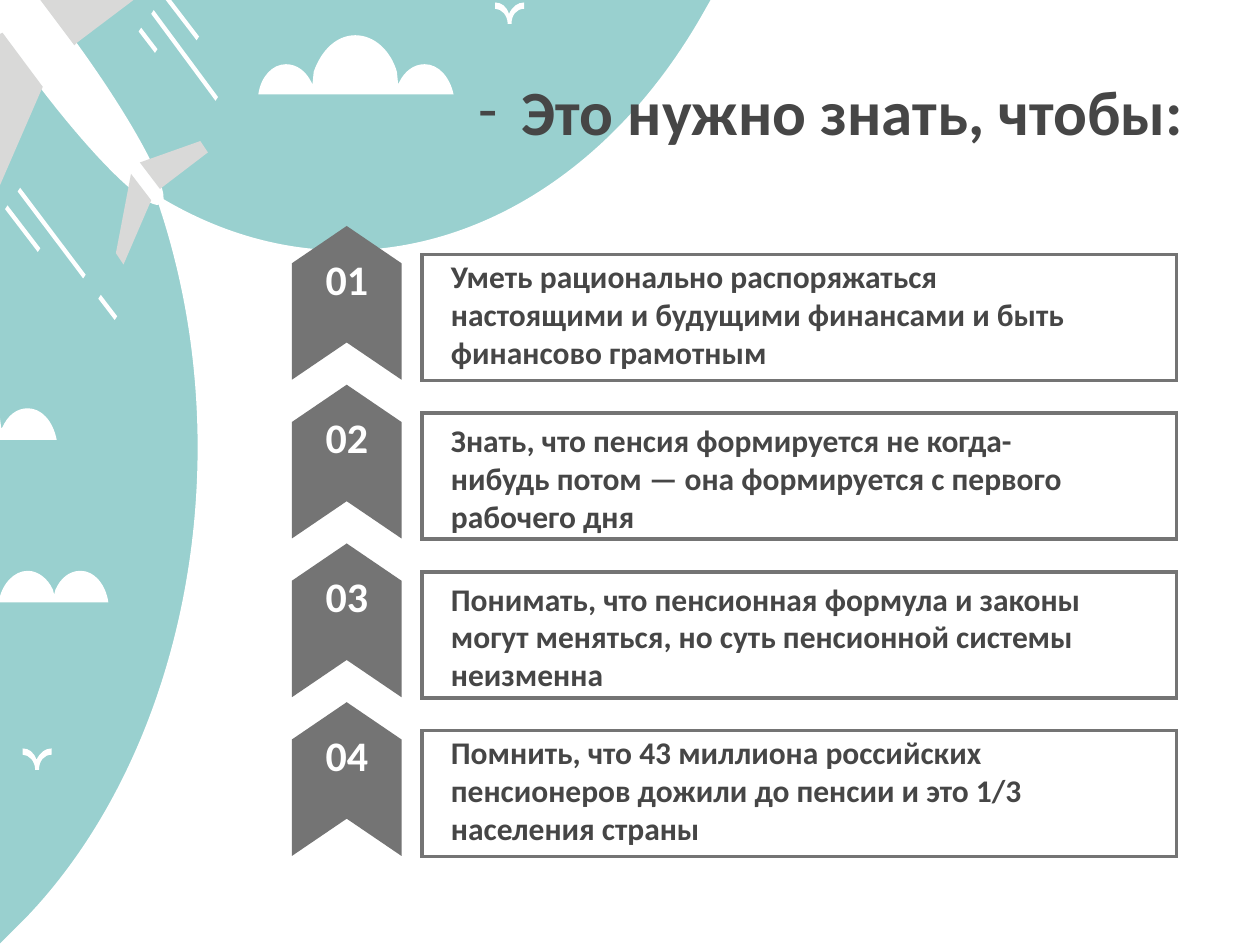
from lxml import etree
from pptx import Presentation
from pptx.dml.color import RGBColor
from pptx.enum.shapes import MSO_SHAPE
from pptx.enum.text import MSO_ANCHOR, MSO_AUTO_SIZE, PP_ALIGN
from pptx.oxml.ns import qn
from pptx.util import Cm, Pt

RECT = MSO_SHAPE.RECTANGLE
CHEVRON = MSO_SHAPE.CHEVRON
ROUND = MSO_SHAPE.ROUND_2_SAME_RECTANGLE
TOP, MIDDLE = MSO_ANCHOR.TOP, MSO_ANCHOR.MIDDLE
GROW = MSO_AUTO_SIZE.SHAPE_TO_FIT_TEXT
LEFT, CENTER, RIGHT = PP_ALIGN.LEFT, PP_ALIGN.CENTER, PP_ALIGN.RIGHT

COLORS = {"sky": "99D0CF", "white": "FFFFFF", "wing": "D9D9D8",
          "gray": "747474", "ink": "464646"}
FONT = "Calibri"
UNIT = 1000
SCALE = Cm(2.54) / UNIT
PITCH = 3.2

ROWS = [
    (4.93, "Уметь рационально распоряжаться настоящими и будущими финансами "
           "и быть финансово грамотным"),
    (8.23, "Знать, что пенсия формируется не когда-нибудь потом — "
           "она формируется с первого рабочего дня"),
    (11.43, "Понимать, что пенсионная формула и законы могут меняться, "
            "но суть пенсионной системы неизменна"),
    (14.53, "Помнить, что 43 миллиона российских пенсионеров дожили до пенсии "
            "и это 1/3 населения страны"),
]

LAND = [(10, 0), (5.64, 0), (5.6, 0.07), (4.61, 1.85, 2.79, 2.51, 1.23, 1.54),
        (1.95, 3.58, 1.48, 5.95, 0.21, 7.28), (-0.01, 7.5), (10, 7.5)]
STREAKS = [(0.8, 2.34, 0.13, 0.17), (0.06, 1.63, 0.26, 0.34),
           (0.16, 1.49, 0.52, 0.69), (1.12, 0.22, 0.13, 0.17),
           (1.22, 0.08, 0.51, 0.69), (1.32, -0.05, 0.26, 0.34)]
CLOUDS = [
    [(2.82, 0.28), (2.67, 0.28, 2.55, 0.4, 2.49, 0.57), (2.48, 0.67),
     (2.47, 0.65), (2.43, 0.57, 2.36, 0.51, 2.27, 0.51),
     (2.16, 0.51, 2.07, 0.61, 2.05, 0.75), (3.6, 0.75),
     (3.57, 0.61, 3.48, 0.51, 3.37, 0.51),
     (3.28, 0.51, 3.21, 0.57, 3.17, 0.65), (3.16, 0.67), (3.15, 0.57),
     (3.1, 0.4, 2.97, 0.28, 2.82, 0.28)],
    [(0.64, 4.53), (0.55, 4.53, 0.48, 4.59, 0.44, 4.68), (0.43, 4.72),
     (0.42, 4.68), (0.38, 4.59, 0.3, 4.53, 0.22, 4.53),
     (0.11, 4.53, 0.01, 4.64, -0.01, 4.78), (0.86, 4.78),
     (0.84, 4.64, 0.75, 4.53, 0.64, 4.53)],
    [(0.22, 3.24), (0.13, 3.24, 0.06, 3.3, 0.02, 3.39), (0.01, 3.4),
     (0, 3.32), (0, 3.49), (0.45, 3.49),
     (0.42, 3.34, 0.33, 3.24, 0.22, 3.24)],
]
BIRD = [(0.1, 0.17), (0.13, 0.17), (0.13, 0.1, 0.17, 0.05, 0.23, 0.05),
        (0.23, 0), (0.18, 0, 0.14, 0.03, 0.11, 0.09),
        (0.09, 0.03, 0.05, 0, 0, 0), (0, 0.05),
        (0.05, 0.05, 0.1, 0.1, 0.1, 0.17)]
BIRDS = [(3.93, 0.02), (0.18, 5.94)]
HULL = [(0.35, 0), (0, 0), (0, 0.27), (0.27, 0.63),
        (0.75, 1.27, 1.21, 1.72, 1.29, 1.61),
        (1.36, 1.51, 1.03, 0.91, 0.55, 0.26)]
WINGS = [[(1.04, 1.38), (0.92, 2.01), (0.98, 2.1), (1.2, 1.59)],
         [(1.59, 1.12), (1.11, 1.29), (1.27, 1.5), (1.65, 1.21)],
         [(0.02, 0.26), (0, 0.27), (0, 1.47), (0.33, 0.71), (0.34, 0.69)],
         [(1.06, 0), (0.32, 0), (0.59, 0.36), (0.61, 0.34)]]


def color(name):
    return RGBColor.from_string(COLORS[name])


def paint(shape, fill=None, line=None):
    shape.shadow.inherit = False
    if fill:
        shape.fill.solid()
        shape.fill.fore_color.rgb = color(fill)
    else:
        shape.fill.background()
    if line:
        shape.line.color.rgb = color(line)
        shape.line.width = Pt(2)
        edge = shape._element.spPr.find(qn("a:ln"))
        etree.SubElement(edge, qn("a:miter")).set("lim", "800000")
    else:
        shape.line.fill.background()


def add_box(slide, kind, x, y, w, h, fill=None, line=None):
    shape = slide.shapes.add_shape(kind, Cm(x), Cm(y), Cm(w), Cm(h))
    paint(shape, fill, line)
    return shape


def expand(nodes, dx, dy):
    return [((x + dx) * UNIT, (y + dy) * UNIT)
            for node in nodes for x, y in zip(node[::2], node[1::2])]


def bend(shape, outlines):
    marks = iter(list(shape._element.iter(qn("a:lnTo"))))
    for nodes in outlines:
        for node in nodes[1:]:
            mark = next(marks)
            if len(node) == 6:
                mark.tag = qn("a:cubicBezTo")
                for extra in (next(marks), next(marks)):
                    mark.append(extra[0])
                    extra.getparent().remove(extra)


def add_free(slide, outlines, fill, dx=0, dy=0):
    loops = [expand(nodes, dx, dy) for nodes in outlines]
    pen = slide.shapes.build_freeform(*loops[0][0], scale=SCALE)
    pen.add_line_segments(loops[0][1:], close=True)
    for loop in loops[1:]:
        pen.move_to(*loop[0])
        pen.add_line_segments(loop[1:], close=True)
    shape = pen.convert_to_shape()
    bend(shape, outlines)
    paint(shape, fill)


def streak(x, y, dx, dy):
    return [(x, y), (x - 0.02, y + 0.03),
            (x + dx - 0.02, y + dy + 0.03), (x + dx, y + dy)]


def set_text(shape, text, size, ink, align, anchor=TOP):
    frame = shape.text_frame
    frame.text = text
    frame.word_wrap = True
    frame.vertical_anchor = anchor
    para = frame.paragraphs[0]
    para.alignment = align
    font = para.runs[0].font
    font.name, font.size, font.bold = FONT, Pt(size), True
    font.color.rgb = color(ink)
    return para


def add_label(slide, x, y, w, h):
    return slide.shapes.add_textbox(Cm(x), Cm(y), Cm(w), Cm(h))


def add_dash(para, gap):
    props = para._p.get_or_add_pPr()
    props.set("marL", str(Cm(gap)))
    props.set("indent", str(-Cm(gap)))
    etree.SubElement(props, qn("a:buFont")).set("typeface", FONT)
    etree.SubElement(props, qn("a:buChar")).set("char", "-")


def add_scene(slide):
    add_box(slide, RECT, 0, 0, 14.38, 19.05, "sky")
    add_free(slide, [LAND], "white")
    add_free(slide, [streak(*item) for item in STREAKS], "white")
    for cloud in CLOUDS:
        add_free(slide, [cloud], "white")
    for x, y in BIRDS:
        add_free(slide, [BIRD], "white", x, y)
    add_free(slide, [HULL], "white")
    add_free(slide, WINGS, "wing")


def add_title(slide):
    title = add_label(slide, 4.6, 1.93, 19.51, 2.13)
    title.text_frame.margin_bottom = Cm(1.68)
    para = set_text(title, "Это нужно знать, чтобы:", 36, "ink", RIGHT, MIDDLE)
    add_dash(para, 0.88)


def add_row(slide, index, top, text):
    drop = index * PITCH
    add_box(slide, RECT, 8.51, 5.13 + drop, 15.21, 2.54, line="gray")
    arrow = add_box(slide, CHEVRON, 5.44, 5 + drop, 3.1, 2.21, "gray")
    arrow.adjustments[0] = 0.34
    arrow.rotation = 270
    label = add_label(slide, 6.22, 4.98 + drop, 1.55, 1.27)
    set_text(label, f"{index + 1:02}", 24, "white", CENTER)
    label.text_frame.auto_size = GROW
    note = add_box(slide, ROUND, 8.71, top, 14, 2.69)
    set_text(note, text, 18, "ink", LEFT)
    note.text_frame.auto_size = GROW


def main():
    deck = Presentation()
    deck.slide_width, deck.slide_height = Cm(25.4), Cm(19.05)
    slide = deck.slides.add_slide(deck.slide_layouts[6])
    add_scene(slide)
    add_title(slide)
    for index, (top, text) in enumerate(ROWS):
        add_row(slide, index, top, text)
    deck.save("out.pptx")


if __name__ == "__main__":
    main()
